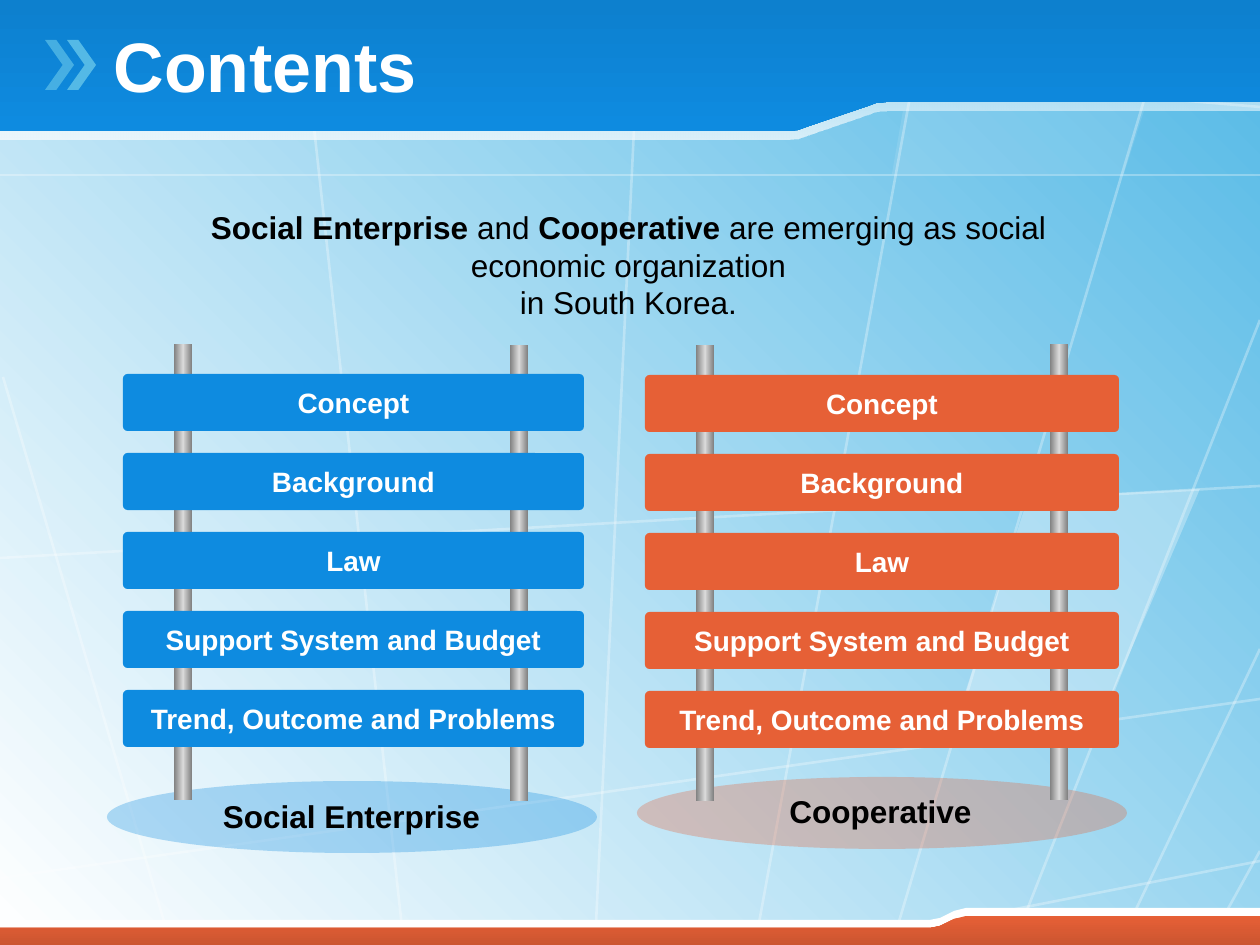
from copy import deepcopy

from pptx import Presentation
from pptx.dml.color import RGBColor
from pptx.enum.shapes import MSO_CONNECTOR, MSO_SHAPE
from pptx.enum.text import MSO_ANCHOR, MSO_AUTO_SIZE, PP_ALIGN
from pptx.oxml.ns import qn
from pptx.oxml.xmlchemy import OxmlElement
from pptx.util import Pt

PX = 7257
FONT = "Arial"
WHITE = RGBColor(0xFF, 0xFF, 0xFF)
BLACK = RGBColor(0x00, 0x00, 0x00)
SKY = RGBColor(0x54, 0xB9, 0xE6)
BLUE = RGBColor(0x0E, 0x8B, 0xE0)
DEEP_BLUE = RGBColor(0x0D, 0x80, 0xCE)
ORANGE = RGBColor(0xE6, 0x60, 0x36)
RUST = RGBColor(0xCC, 0x55, 0x30)
GREY = RGBColor(0x80, 0x80, 0x80)
SILVER = RGBColor(0xD9, 0xD9, 0xD9)
RECTANGLE = MSO_SHAPE.RECTANGLE
ROUNDED = MSO_SHAPE.ROUNDED_RECTANGLE
OVAL = MSO_SHAPE.OVAL
CHEVRON = MSO_SHAPE.CHEVRON
STRAIGHT = MSO_CONNECTOR.STRAIGHT
MIDDLE = MSO_ANCHOR.MIDDLE
CENTER = PP_ALIGN.CENTER
LEFT = PP_ALIGN.LEFT


def paint(shape, colours, angle=0):
    shape.shadow.inherit = False
    shape.line.fill.background()
    if len(colours) == 1:
        shape.fill.solid()
        shape.fill.fore_color.rgb = colours[0]
    else:
        shape.fill.gradient()
        shape.fill.gradient_angle = angle
        for stop, colour in zip(shape.fill.gradient_stops, colours):
            stop.color.rgb = colour


def fade(shape, *percents):
    for colour, percent in zip(shape._element.spPr.iter(qn("a:srgbClr")), percents):
        alpha = OxmlElement("a:alpha")
        alpha.set("val", str(percent * 1000))
        colour.append(alpha)


deck = Presentation()
deck.slide_width, deck.slide_height = 1260 * PX, 945 * PX
page = deck.slides.add_slide(deck.slide_layouts[5])
shapes = page.shapes

backdrop = page.background.fill
backdrop.gradient()
backdrop.gradient_angle = 45
for stop, colour in zip(backdrop.gradient_stops, (WHITE, SKY)):
    stop.color.rgb = colour

grid_lines = [
    (1174, 0, 892, 945), (927, 4, 755, 945), (640, 4, 595, 945),
    (300, 0, 404, 945), (3, 377, 171, 945), (1260, 320, 1014, 943),
    (1260, 649, 1120, 943), (1260, 851, 1208, 945), (1260, 107, 5, 1),
    (1260, 486, 0, 558), (1260, 699, 1, 878), (1260, 861, 853, 941),
    (1260, 175, 0, 175),
]
for x1, y1, x2, y2 in grid_lines:
    line = shapes.add_connector(STRAIGHT, x1 * PX, y1 * PX, x2 * PX, y2 * PX)
    line.line.color.rgb = WHITE
    line.line.width = Pt(1 if y1 == y2 else 1.5)
    line._element.spPr.append(OxmlElement("a:effectLst"))
    fade(line, 30)

header = [(0, 131), (788, 131), (798, 130), (809, 126), (868, 106),
          (876, 103), (886, 102), (1260, 102), (1260, 0), (0, 0)]
footer = [(0, 920), (930, 920), (940, 918), (954, 911), (966, 908),
          (1260, 908), (1260, 945), (0, 945)]
outlines = [
    ([(1028, 498), (1200, 489), (1099, 725), (949, 743)], 0, [WHITE], [30]),
    ([(903, 111), (892, 174), (1124, 174), (1144, 111)], 0, [WHITE], [10]),
    (header, 9, [WHITE, WHITE], [0, 70]),
    (header, 0, [DEEP_BLUE, BLUE], []),
    (footer, 0, [WHITE], []),
    (footer, 8, [ORANGE, RUST], []),
]
for points, drop, colours, alphas in outlines:
    moved = [(x, y if y in (0, 945) else y + drop) for x, y in points]
    builder = shapes.build_freeform(*moved[0], scale=PX)
    builder.add_line_segments(moved[1:], close=True)
    outline = builder.convert_to_shape()
    paint(outline, colours, 270)
    fade(outline, *alphas)

for x, opacity in ((45, 80), (67, 100)):
    chevron = shapes.add_shape(CHEVRON, x * PX, 40 * PX, 29 * PX, 50 * PX)
    chevron.adjustments[0] = 0.61
    paint(chevron, [SKY])
    fade(chevron, opacity)

title = shapes.title
shapes._spTree.append(title._element)
title.left, title.top, title.width, title.height = 101 * PX, 21 * PX, 806 * PX, 88 * PX
title.text_frame.text = "Contents"
texts = [(title, 40, WHITE, LEFT)]

topics = ["Concept", "Background", "Law", "Support System and Budget",
          "Trend, Outcome and Problems"]
columns = [
    ("Social Enterprise", BLUE, (107, 781), [(510, 345), (174, 344)],
     (123, 374, 461), (209, 790, 285)),
    ("Cooperative", ORANGE, (637, 777), [(1050, 344), (696, 345)],
     (645, 375, 474), (776, 785, 209)),
]
for name, colour, base_at, rails, (bar_x, bar_y, bar_w), (x, y, w) in columns:
    base = shapes.add_shape(OVAL, base_at[0] * PX, base_at[1] * PX, 490 * PX, 72 * PX)
    paint(base, [colour])
    fade(base, 30)

    for rail_x, rail_y in rails:
        rail = shapes.add_shape(RECTANGLE, rail_x * PX, rail_y * PX, 18 * PX, 456 * PX)
        paint(rail, [GREY, SILVER])
        stops = rail._element.spPr.find(".//" + qn("a:gsLst"))
        stops.append(deepcopy(stops[0]))
        for stop, position in zip(stops, (0, 50000, 100000)):
            stop.set("pos", str(position))

    for row, topic in enumerate(topics):
        bar = shapes.add_shape(ROUNDED, bar_x * PX, (bar_y + 79 * row) * PX,
                               bar_w * PX, 57 * PX)
        bar.adjustments[0] = 0.08
        paint(bar, [colour])
        bar.text_frame.text = topic
        texts.append((bar, 16, WHITE, CENTER))

    label = shapes.add_textbox(x * PX, y * PX, w * PX, 51 * PX)
    label.text_frame.text = name
    texts.append((label, 18, BLACK, CENTER))

for shape, size, colour, alignment in texts:
    frame = shape.text_frame
    frame.word_wrap = False
    frame.auto_size = MSO_AUTO_SIZE.NONE
    frame.vertical_anchor = MIDDLE
    para = frame.paragraphs[0]
    para.alignment = alignment
    font = para.runs[0].font
    font.name, font.size, font.bold = FONT, Pt(size), True
    font.color.rgb = colour

intro = shapes.add_textbox(142 * PX, 200 * PX, 973 * PX, 129 * PX).text_frame
intro.word_wrap = False
intro.vertical_anchor = MIDDLE
intro_lines = [
    [("Social Enterprise ", True), ("and", False), (" Cooperative", True),
     (" are emerging as social economic organization", False)],
    [("in South Korea.", False)],
]
for index, spans in enumerate(intro_lines):
    para = intro.add_paragraph() if index else intro.paragraphs[0]
    para.alignment = CENTER
    for words, bold in spans:
        span = para.add_run()
        span.text = words
        span.font.name, span.font.size, span.font.bold = FONT, Pt(18), bold
        span.font.color.rgb = BLACK

deck.save("out.pptx")
